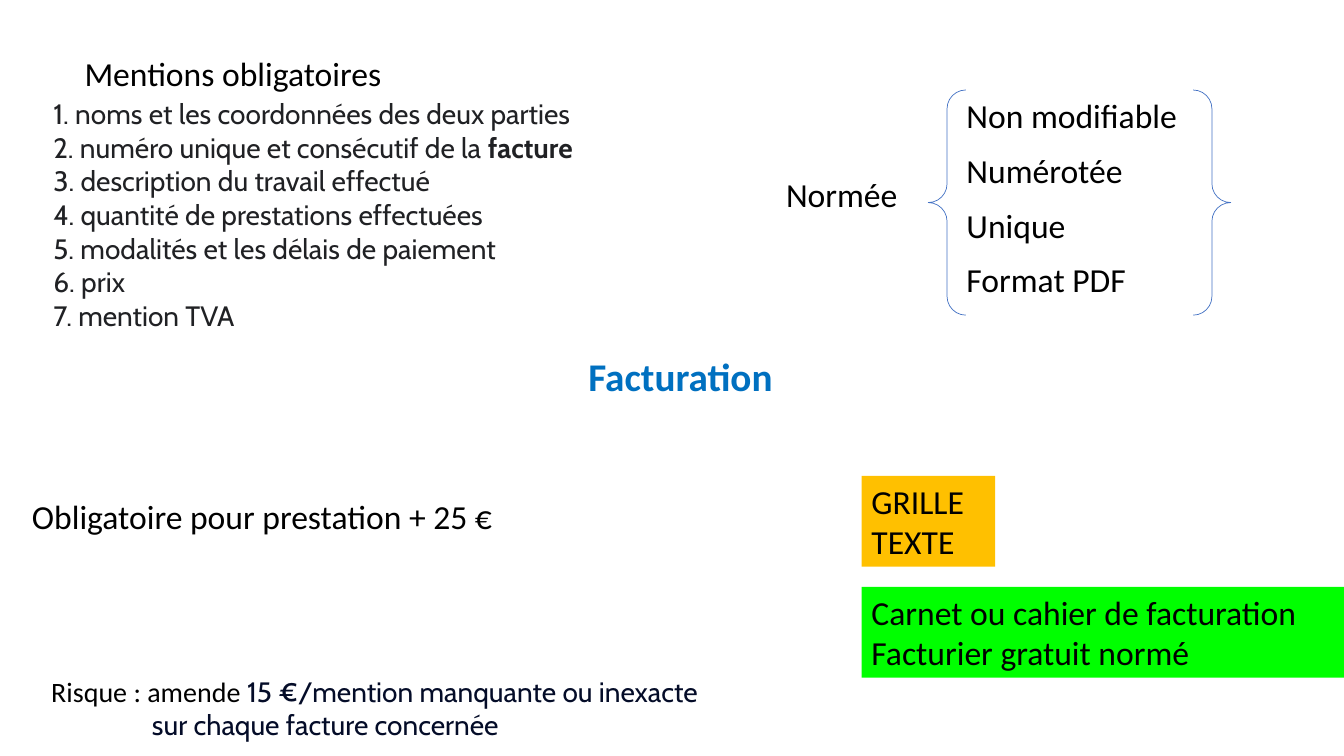
import pptx
import pptx.util
import pptx.dml.color
import pptx.enum.shapes
import pptx.enum.text
import lxml.etree
from dataclasses import dataclass

Pt = pptx.util.Pt


@dataclass(frozen=True)
class Theme:
    sans: str = "Calibri"
    alt: str = "Cabin"
    head: int = 28
    body: int = 24
    small: int = 20
    black: str = "000000"
    blue: str = "0070C0"
    navy: str = "040C28"
    gray: str = "202124"
    brace: str = "4472C4"
    gold: str = "FFC000"
    green: str = "00FF00"


theme = Theme()


def color(code):
    return pptx.dml.color.RGBColor.from_string(code)


def add_run(para, text, size=theme.body, font=theme.sans, ink=theme.black, bold=False):
    run = para.add_run()
    run.text = text
    run.font.size = Pt(size)
    run.font.name = font
    run.font.bold = bold
    run.font.color.rgb = color(ink)


def add_para(frame, first):
    para = frame.paragraphs[0] if first else frame.add_paragraph()
    para.alignment = pptx.enum.text.PP_ALIGN.LEFT
    return para


def add_box(slide, left, top, width, height):
    box = slide.shapes.add_textbox(Pt(left), Pt(top), Pt(width), Pt(height))
    box.text_frame.word_wrap = True
    return box


def add_label(slide, left, top, width, lines, fill=None):
    box = add_box(slide, left, top, width, 7.2 + 28.8 * len(lines))
    if fill:
        box.fill.solid()
        box.fill.fore_color.rgb = color(fill)
    for i, line in enumerate(lines):
        add_run(add_para(box.text_frame, i == 0), line)


def add_title(slide, text):
    box = add_box(slide, 362.2, 248.4, 247.7, 41)
    para = add_para(box.text_frame, True)
    para.alignment = pptx.enum.text.PP_ALIGN.CENTER
    add_run(para, text, theme.head, ink=theme.blue, bold=True)


def add_list(slide, items):
    frame = add_box(slide, 31, 65.5, 412.6, 198.7).text_frame
    for i, (text, strong) in enumerate(items):
        para = add_para(frame, i == 0)
        props = para._p.get_or_add_pPr()
        num = lxml.etree.SubElement(props, pptx.oxml.ns.qn("a:buAutoNum"))
        num.set("type", "arabicPeriod")
        add_run(para, " " + text, theme.small, theme.alt, theme.gray)
        if strong:
            add_run(para, strong, theme.small, theme.alt, theme.gray, True)


def add_risk(slide):
    frame = add_box(slide, 29.5, 478.1, 727.2, 55.4).text_frame
    para = add_para(frame, True)
    add_run(para, "Risque : amende ", theme.small)
    add_run(para, "15 €/mention manquante ou inexacte", theme.small, theme.alt, theme.navy)
    para = add_para(frame, False)
    para._p.get_or_add_pPr().set("marL", str(Pt(72)))
    add_run(para, "sur chaque facture concernée", theme.small, theme.alt, theme.navy)


def add_brace(slide):
    kind = pptx.enum.shapes.MSO_SHAPE.DOUBLE_BRACE
    brace = slide.shapes.add_shape(kind, Pt(663.1), Pt(64.3), Pt(216), Pt(160.8))
    brace.shadow.inherit = False
    brace.fill.background()
    brace.line.color.rgb = color(theme.brace)
    brace.line.width = Pt(0.5)


def main():
    deck = pptx.Presentation()
    deck.slide_width, deck.slide_height = Pt(960), Pt(540)
    slide = deck.slides.add_slide(deck.slide_layouts[6])

    add_title(slide, "Facturation")
    add_label(slide, 15.8, 350.6, 450.7, ["Obligatoire pour prestation + 25 €"])
    add_label(slide, 554.4, 121, 100, ["Normée"])
    for i, trait in enumerate(["Non modifiable", "Numérotée", "Unique", "Format PDF"]):
        add_label(slide, 683.3, 64.3 + 39.1 * i, 196.6, [trait])
    add_brace(slide)

    add_label(slide, 615.4, 339.9, 95.5, ["GRILLE", "TEXTE"], theme.gold)
    notes = ["Carnet ou cahier de facturation", "Facturier gratuit normé"]
    add_label(slide, 615.4, 419.2, 344.6, notes, theme.green)

    add_label(slide, 53.3, 34.6, 277.2, ["Mentions obligatoires"])
    add_list(slide, [
        ("noms et les coordonnées des deux parties", ""),
        ("numéro unique et consécutif de la ", "facture"),
        ("description du travail effectué", ""),
        ("quantité de prestations effectuées", ""),
        ("modalités et les délais de paiement", ""),
        ("prix", ""),
        ("mention TVA", ""),
    ])
    add_risk(slide)
    deck.save("out.pptx")


if __name__ == "__main__":
    main()
